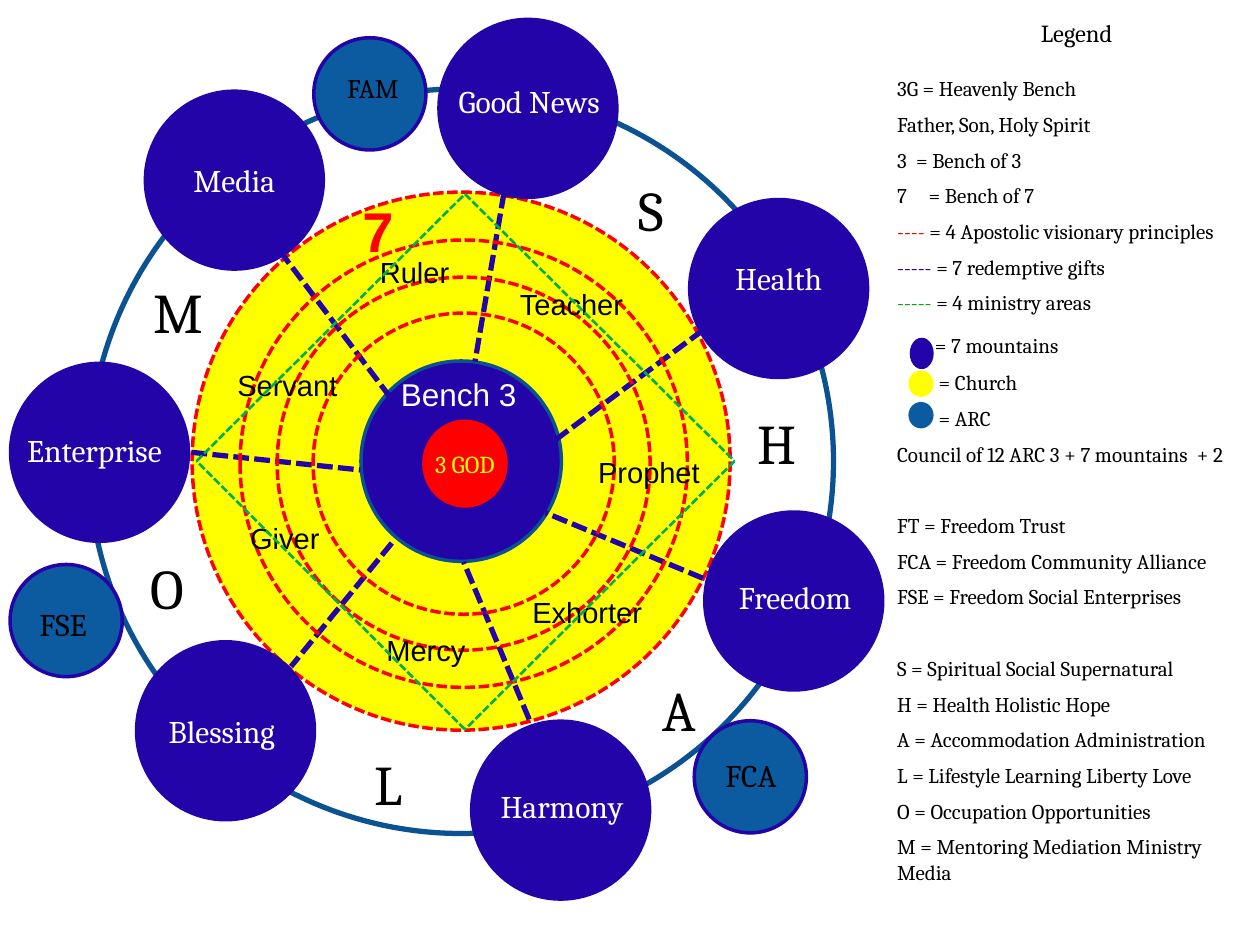
from itertools import pairwise
from typing import NamedTuple, Optional

from lxml import etree
from pptx import Presentation
from pptx.dml.color import RGBColor
from pptx.enum import dml, shapes, text
from pptx.oxml import ns
from pptx.util import Inches, Pt

COLORS = {
    "white": "FFFFFF", "black": "000000", "yellow": "FFFF00", "red": "FF0000",
    "mountain": "2304A8", "ring": "0B5292", "arc": "0C5AA0",
    "diamond": "00B050", "ministry": "00A800",
}
MOUNTAIN_SIZE, ARC_SIZE = 1.44, 0.89


class Label(NamedTuple):
    wording: str
    left: float
    top: float
    width: float


class Disk(NamedTuple):
    """A circle with a label placed separately."""
    left: float
    top: float
    label: Label
    size: float = 18


class Entry(NamedTuple):
    """One legend line, with an optional coloured dash sample."""
    wording: str
    sample: str = ""
    color: str = "black"
    indent: float = 0
    before: float = 0
    number: Optional[int] = None


MOUNTAINS = [
    Disk(3.47, 0.14, Label("Good News", 3.53, 0.65, 1.34)),
    Disk(5.46, 1.57, Label("Health", 5.51, 2.06, 1.34)),
    Disk(5.58, 4.05, Label("Freedom", 5.64, 4.59, 1.34)),
    Disk(3.73, 5.71, Label("Harmony", 3.79, 6.25, 1.34)),
    Disk(1.07, 5.08, Label("Blessing", 1.09, 5.65, 1.34)),
    Disk(0.07, 2.87, Label("Enterprise", 0.08, 3.42, 1.34)),
    Disk(1.14, 0.71, Label("Media", 1.19, 1.28, 1.34)),
]
ARCS = [
    Disk(0.08, 4.48, Label("FSE", 0.26, 4.8, 0.48)),
    Disk(5.51, 5.72, Label("FCA", 5.72, 6, 0.48)),
    Disk(2.49, 0.3, Label("FAM", 2.72, 0.57, 0.48), 15.3),
]
SPOKES = [
    ((4, 1.53), (3.77, 2.87)), ((5.58, 2.62), (4.41, 3.49)),
    ((2.22, 1.99), (3.11, 3.17)), ((1.52, 3.59), (2.86, 3.73)),
    ((5.58, 4.59), (4.33, 4.07)), ((4.2, 5.71), (3.68, 4.46)),
    ((3.11, 4.31), (2.31, 5.29)),
]
LETTERS = [
    Label("S", 4.73, 1.39, 0.87), Label("H", 5.73, 3.24, 0.87),
    Label("A", 4.96, 5.36, 0.87), Label("L", 2.64, 5.95, 0.89),
    Label("O", 0.89, 4.39, 0.87), Label("M", 0.98, 2.2, 0.87),
]
GIFTS = [
    Label("Ruler", 2.85, 2.02, 0.88), Label("Servant", 1.84, 2.92, 0.88),
    Label("Giver", 1.82, 4.13, 0.88), Label("Mercy", 2.94, 5.02, 0.88),
    Label("Exhorter", 4.14, 4.72, 1.04), Label("Prophet", 4.71, 3.61, 0.88),
    Label("Teacher", 4.01, 2.27, 1.05),
]
DIAMOND = [(3.69, 1.54), (5.83, 3.66), (3.69, 5.79), (1.56, 3.66), (3.69, 1.54)]
LEGEND = [
    Entry("3G = Heavenly Bench"),
    Entry("Father, Son, Holy Spirit"),
    Entry("3  = Bench of 3"),
    Entry("= Bench of 7", indent=0.25, number=7),
    Entry(" = 4 Apostolic visionary principles", "----", "red"),
    Entry(" = 7 redemptive gifts", "-----", "mountain"),
    Entry(" = 4 ministry areas", "-----", "ministry"),
    Entry("= 7 mountains", indent=0.3, before=3.7),
    Entry("= Church", indent=0.33, before=1.1),
    Entry("= ARC", indent=0.33),
    Entry("Council of 12 ARC 3 + 7 mountains  + 2"),
    Entry("FT = Freedom Trust", before=20.4),
    Entry("FCA = Freedom Community Alliance"),
    Entry("FSE = Freedom Social Enterprises"),
    Entry("S = Spiritual Social Supernatural", before=20.4),
    Entry("H = Health Holistic Hope"),
    Entry("A = Accommodation Administration"),
    Entry("L = Lifestyle Learning Liberty Love"),
    Entry("O = Occupation Opportunities"),
    Entry("M = Mentoring Mediation Ministry Media"),
]


def rgb(name: str) -> RGBColor:
    return RGBColor.from_string(COLORS[name])


def style_font(font, size: float, color: str, name: str = "Cambria", bold: bool = False) -> None:
    font.size, font.name, font.bold = Pt(size), name, bold
    font.color.rgb = rgb(color)


def style_line(line, color: str, width: float, dashed: bool) -> None:
    line.color.rgb, line.width = rgb(color), Pt(width)
    if dashed:
        line.dash_style = dml.MSO_LINE.SQUARE_DOT


def prepare_frame(frame, wrap: bool = True, anchor=text.MSO_ANCHOR.TOP) -> None:
    frame.margin_left = frame.margin_right = frame.margin_top = frame.margin_bottom = 0
    frame.auto_size = text.MSO_AUTO_SIZE.NONE
    frame.word_wrap, frame.vertical_anchor = wrap, anchor


def add_oval(slide, left: float, top: float, width: float, height: float, fill: Optional[str] = None,
             line: Optional[str] = None, line_width: float = 2, dashed: bool = False):
    shape = slide.shapes.add_shape(
        shapes.MSO_SHAPE.OVAL, Inches(left), Inches(top), Inches(width), Inches(height))
    shape.shadow.inherit = False
    if fill:
        shape.fill.solid()
        shape.fill.fore_color.rgb = rgb(fill)
    else:
        shape.fill.background()
    if line:
        style_line(shape.line, line, line_width, dashed)
    else:
        shape.line.fill.background()
    return shape


def add_ring(slide, center: float, size: float, **style) -> None:
    corner = center - size / 2
    add_oval(slide, corner, corner, size, size, **style)


def add_dashed_line(slide, start: tuple, end: tuple, color: str, width: float) -> None:
    connector = slide.shapes.add_connector(
        shapes.MSO_CONNECTOR.STRAIGHT, *(Inches(value) for value in (*start, *end)))
    style_line(connector.line, color, width, True)
    etree.SubElement(connector._element.spPr, ns.qn("a:effectLst"))


def add_label(slide, label: Label, size: float, color: str, font: str = "Cambria", bold: bool = False) -> None:
    box = slide.shapes.add_textbox(
        Inches(label.left), Inches(label.top), Inches(label.width), Inches(size / 60))
    prepare_frame(box.text_frame)
    paragraph = box.text_frame.paragraphs[0]
    paragraph.text, paragraph.alignment = label.wording, text.PP_ALIGN.CENTER
    style_font(paragraph.font, size, color, font, bold)


def place(shape, left: float, top: float, width: float, height: float) -> None:
    shape.left, shape.top, shape.width, shape.height = map(Inches, (left, top, width, height))
    prepare_frame(shape.text_frame)


def write_entry(paragraph, entry: Entry) -> None:
    if entry.sample:
        run = paragraph.add_run()
        run.text = entry.sample
        run.font.color.rgb = rgb(entry.color)
    paragraph.add_run().text = entry.wording
    style_font(paragraph.font, 12, "black")
    paragraph.alignment = text.PP_ALIGN.LEFT
    paragraph.space_before, paragraph.space_after = Pt(entry.before), Pt(6)
    properties = paragraph._p.get_or_add_pPr()
    numbered = entry.number is not None
    properties.set("marL", str(Inches(entry.indent)))
    properties.set("indent", str(-Inches(entry.indent) if numbered else 0))
    bullet = etree.Element(ns.qn("a:buAutoNum" if numbered else "a:buNone"))
    if numbered:
        bullet.set("type", "arabicPlain")
        bullet.set("startAt", str(entry.number))
    properties.find(ns.qn("a:defRPr")).addprevious(bullet)


def main() -> None:
    presentation = Presentation()
    presentation.slide_width, presentation.slide_height = Inches(10), Inches(7.5)
    slide = presentation.slides.add_slide(presentation.slide_layouts[1])

    # Legend
    title, body = slide.placeholders
    place(title, 7.12, 0.14, 2.85, 0.3)
    title.text_frame.text = "Legend"
    style_font(title.text_frame.paragraphs[0].font, 14, "black")
    place(body, 7.12, 0.6, 2.85, 6.9)
    for index, entry in enumerate(LEGEND):
        frame = body.text_frame
        write_entry(frame.add_paragraph() if index else frame.paragraphs[0], entry)
    add_oval(slide, 7.22, 2.68, 0.19, 0.25, "mountain")
    add_oval(slide, 7.21, 2.94, 0.2, 0.21, "yellow")
    add_oval(slide, 7.21, 3.19, 0.2, 0.21, "arc")

    # Outer ring, church and benches
    add_ring(slide, 3.66, 5.91, fill="white", line="ring", line_width=3)
    add_ring(slide, 3.66, 4.27, fill="yellow", line="red", dashed=True)
    add_ring(slide, 3.66, 1.59, fill="mountain", line="ring")
    core = add_oval(slide, 3.35, 3.33, 0.68, 0.7, "red")
    prepare_frame(core.text_frame, False, text.MSO_ANCHOR.MIDDLE)
    paragraph = core.text_frame.paragraphs[0]
    paragraph.text, paragraph.alignment = "3 GOD", text.PP_ALIGN.CENTER
    paragraph.space_before = Pt(3)
    style_font(paragraph.font, 13.9, "yellow")

    # Mountains, spokes and ARC circles
    for disk in MOUNTAINS:
        add_oval(slide, disk.left, disk.top, MOUNTAIN_SIZE, MOUNTAIN_SIZE, "mountain")
        add_label(slide, disk.label, disk.size, "white")
    for start, end in SPOKES:
        add_dashed_line(slide, start, end, "mountain", 3)
    for size in (2.39, 2.96, 3.55):
        add_ring(slide, 3.68, size, line="red", dashed=True)
    for disk in ARCS:
        add_oval(slide, disk.left, disk.top, ARC_SIZE, ARC_SIZE, "arc", "mountain")
        add_label(slide, disk.label, disk.size, "black")

    # Bench names, letters and gifts
    add_label(slide, Label("Bench 3", 2.97, 2.98, 1.34), 18, "white", "Arial")
    add_label(slide, Label("7", 2.56, 1.56, 0.88), 32, "red", "Arial", True)
    for letter in LETTERS:
        add_label(slide, letter, 32, "black")
    for gift in GIFTS:
        add_label(slide, gift, 16.6, "black", "Arial")

    # Ministry diamond
    for start, end in pairwise(DIAMOND):
        add_dashed_line(slide, start, end, "diamond", 1.5)

    presentation.save("out.pptx")


if __name__ == "__main__":
    main()
